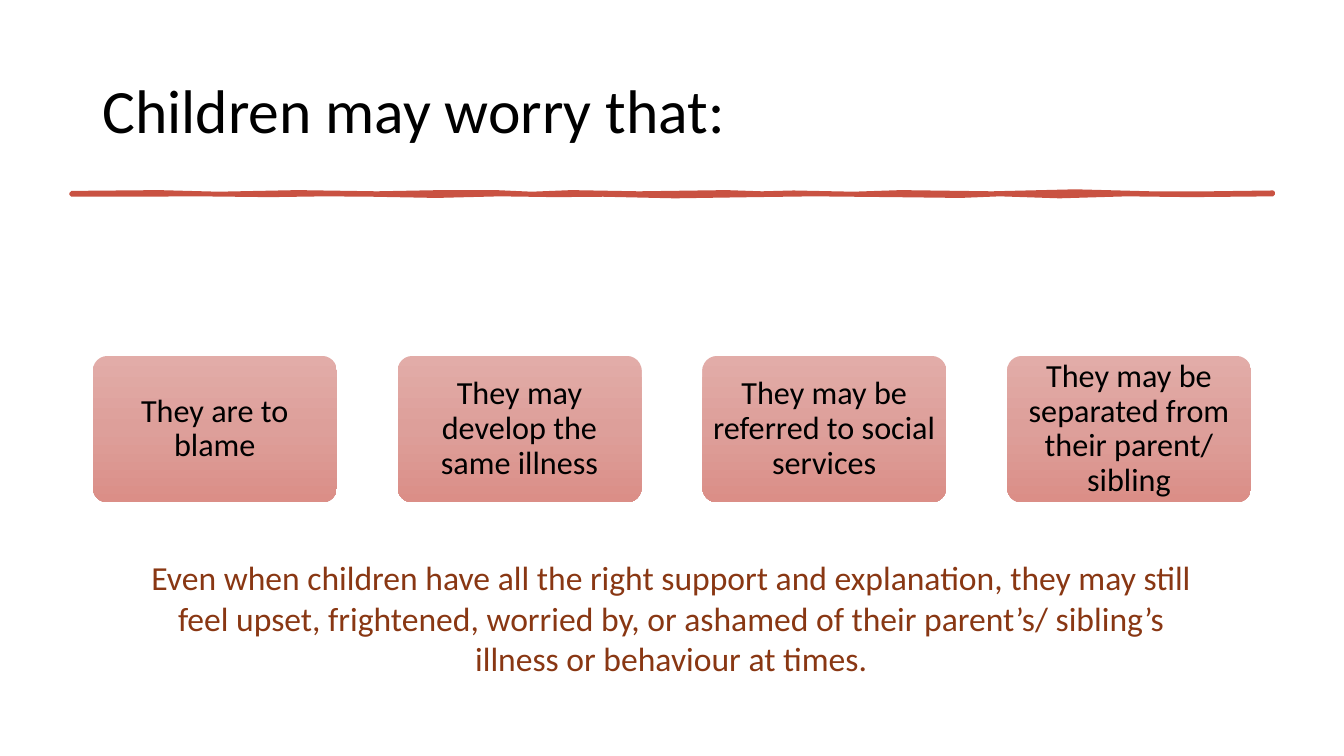
from copy import deepcopy

from pptx import Presentation
from pptx.dml.color import RGBColor
from pptx.enum.shapes import MSO_SHAPE
from pptx.enum.text import MSO_ANCHOR, PP_ALIGN
from pptx.util import Cm, Pt

ROUNDED = MSO_SHAPE.ROUNDED_RECTANGLE
TOP, MIDDLE = MSO_ANCHOR.TOP, MSO_ANCHOR.MIDDLE
LEFT, CENTER = PP_ALIGN.LEFT, PP_ALIGN.CENTER

FONT = "Calibri"
COLORS = {
    "text": "000000",
    "note": "893713",
    "rule": "C95242",
    "card_top": "E2ACA8",
    "card_middle": "DD9F9A",
    "card_bottom": "DB8E87",
}

WORRIES = [
    "They are to blame",
    "They may develop the same illness",
    "They may be referred to social services",
    "They may be separated from their parent/ sibling",
]
NOTE = (
    "Even when children have all the right support and explanation, "
    "they may still feel upset, frightened, worried by, or ashamed of "
    "their parent’s/ sibling’s illness or behaviour at times."
)

# Edges of the hand-drawn rule, as (x, y) in centimetres
RULE_TOP = [
    (1.8, 4.86), (4, 4.84), (5.5, 4.88), (7.5, 4.84), (9.5, 4.87),
    (11.1, 4.84), (12.5, 4.84), (13.4, 4.88), (14.4, 4.84), (16.1, 4.87),
    (18.3, 4.84), (19.2, 4.87), (20, 4.85), (21.5, 4.88), (22.7, 4.84),
    (25, 4.87), (27.1, 4.82), (29, 4.87), (30.5, 4.87), (32.08, 4.85),
]
RULE_BOTTOM = [
    (1.8, 4.91), (3.1, 4.91), (5, 4.9), (6.8, 4.92), (8.2, 4.9),
    (9.4, 4.91), (11, 4.94), (12.6, 4.9), (14, 4.92), (15.2, 4.91),
    (17, 4.95), (19, 4.92), (20.5, 4.9), (22.5, 4.92), (24.2, 4.94),
    (25.2, 4.9), (26.7, 4.95), (28.4, 4.9), (30, 4.92), (32.08, 4.9),
]


def color(name):
    return RGBColor.from_string(COLORS[name])


def write_text(shape, text, size, color_name, alignment, anchor, spacing=1.0):
    frame = shape.text_frame
    frame.word_wrap = True
    frame.vertical_anchor = anchor
    frame.text = text
    paragraph = frame.paragraphs[0]
    paragraph.alignment = alignment
    paragraph.line_spacing = spacing
    font = paragraph.runs[0].font
    font.name = FONT
    font.size = Pt(size)
    font.color.rgb = color(color_name)


def add_text(slide, box, *text_style):
    shape = slide.shapes.add_textbox(*map(Cm, box))
    write_text(shape, *text_style)


def add_rule(slide):
    outline = RULE_TOP + RULE_BOTTOM[::-1]
    points = [(Cm(x), Cm(y)) for x, y in outline]
    builder = slide.shapes.build_freeform(*points[0])
    builder.add_line_segments(points[1:], close=True)
    shape = builder.convert_to_shape()
    shape.shadow.inherit = False
    shape.fill.solid()
    shape.fill.fore_color.rgb = color("rule")
    shape.line.color.rgb = color("rule")
    shape.line.width = Pt(2.75)


def fill_gradient(shape, names):
    shape.fill.gradient()
    shape.fill.gradient_angle = 270
    stop_list = shape.element.xpath(".//a:gsLst")[0]
    stop_list.insert(1, deepcopy(stop_list[0]))
    for index, (stop, name) in enumerate(zip(shape.fill.gradient_stops, names)):
        stop.position = index / (len(names) - 1)
        stop.color.rgb = color(name)


def add_card(slide, left, text):
    shape = slide.shapes.add_shape(ROUNDED, Cm(left), Cm(8.97), Cm(6.15), Cm(3.69))
    shape.adjustments[0] = 0.1
    shape.shadow.inherit = False
    shape.line.fill.background()
    fill_gradient(shape, ["card_top", "card_middle", "card_bottom"])
    frame = shape.text_frame
    frame.margin_left = frame.margin_right = Cm(0.09)
    frame.margin_top = frame.margin_bottom = Cm(0.09)
    write_text(shape, text, 23, "text", CENTER, MIDDLE, 0.9)


def main():
    presentation = Presentation()
    presentation.slide_width = Cm(33.87)
    presentation.slide_height = Cm(19.05)
    slide = presentation.slides.add_slide(presentation.slide_layouts[6])

    # Heading and rule
    add_rule(slide)
    add_text(slide, (2.33, 1.01, 29.21, 3.68), "Children may worry that:",
             44, "text", LEFT, MIDDLE, 0.9)

    # Row of worries
    for index, worry in enumerate(WORRIES):
        add_card(slide, 2.34 + index * 7.68, worry)

    # Closing note
    add_text(slide, (3.15, 13.92, 27.53, 4.11), NOTE, 24, "note", CENTER, TOP)

    presentation.save("out.pptx")


if __name__ == "__main__":
    main()
